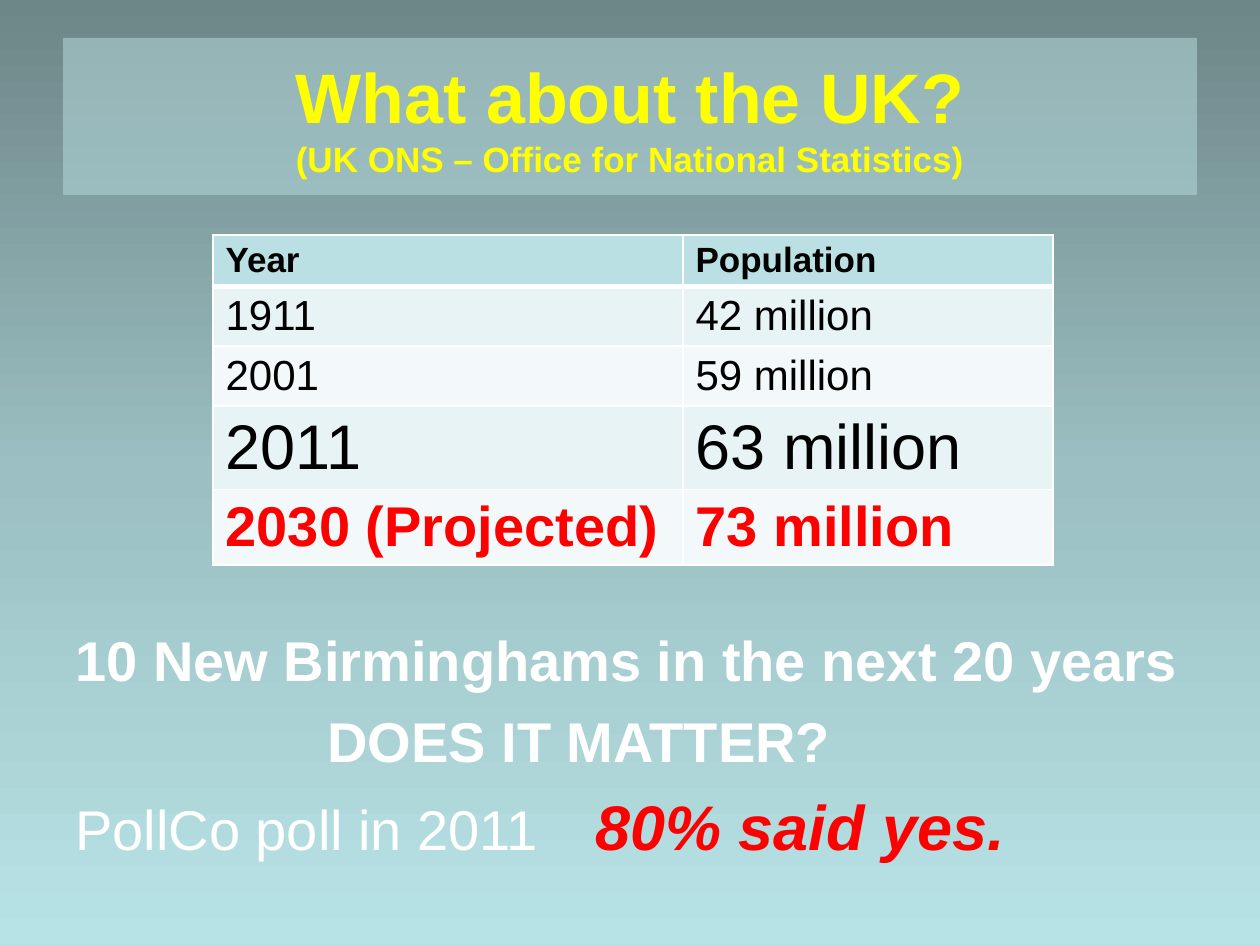
"""Build the slide on UK population growth."""
from copy import deepcopy

from pptx import Presentation
from pptx.dml.color import RGBColor
from pptx.enum.text import MSO_ANCHOR, MSO_AUTO_SIZE, PP_ALIGN
from pptx.oxml.ns import qn
from pptx.util import Emu, Pt
from lxml import etree

CENTER, LEFT = PP_ALIGN.CENTER, PP_ALIGN.LEFT
MIDDLE = MSO_ANCHOR.MIDDLE
NO_AUTOFIT = MSO_AUTO_SIZE.NONE
FONT = "Arial"
YELLOW, WHITE, BLACK, RED, AQUA = "FFFF00", "FFFFFF", "000000", "FF0000", "BBE0E3"
BACKDROP = [(0, "6D8688"), (0.5, "9BBFC2"), (1, "B8E3E6")]

HEADING = [("What about the UK?\v", {"size": 40}),
           ("(UK ONS – Office for National Statistics)", {"size": 20})]
COLUMN_WIDTHS = [470, 370]
POPULATION = [
    (("Year", "Population"), 51, AQUA, {"size": 20, "bold": True}),
    (("1911", "42 million"), 59, "E7F3F4", {"size": 24}),
    (("2001", "59 million"), 60, "F3F9FA", {"size": 24}),
    (("2011", "63 million"), 83, "E7F3F4", {"size": 36}),
    (("2030 (Projected)", "73 million"), 75, "F3F9FA",
     {"size": 32, "bold": True, "color": RED}),
]
CLOSING = [
    (0, [("10 New Birminghams in the next 20 years", {"bold": True})]),
    (252, [("DOES IT MATTER?", {"bold": True})]),
    (0, [("PollCo poll in 2011\t", {}),
         ("80% said yes.", {"size": 36, "bold": True, "italic": True, "color": RED})]),
]
ANSWER_TAB = 520


def px(length):
    return Emu(round(length * 914400 / 126))


def rgb(color):
    return RGBColor.from_string(color)


def write(paragraph, text, size=32, color=BLACK, bold=False, italic=False):
    start = len(paragraph.runs)
    paragraph.add_run().text = text.rstrip("\v")
    if text.endswith("\v"):
        paragraph.add_line_break()
    font = paragraph.runs[start].font
    font.name, font.size, font.bold, font.italic = FONT, Pt(size), bold, italic
    font.color.rgb = rgb(color)


def paint_background(slide):
    fill = slide.background.fill
    fill.gradient()
    fill.gradient_angle = 270
    last = fill.gradient_stops[1].color
    stop_list = slide.background._cSld.find(".//" + qn("a:gsLst"))
    stop_list.append(deepcopy(stop_list[-1]))
    for stop, (position, color) in zip(fill.gradient_stops, BACKDROP):
        stop.position = position
        stop.color.rgb = rgb(color)


def add_heading(slide):
    heading = slide.shapes.title
    heading.left, heading.top, heading.width, heading.height = map(px, (63, 38, 1134, 157))
    heading.fill.solid()
    heading.fill.fore_color.rgb = rgb(AQUA)
    tint = heading._element.spPr.find(".//" + qn("a:srgbClr"))
    etree.SubElement(tint, qn("a:alpha"), val="49000")
    frame = heading.text_frame
    frame.auto_size, frame.vertical_anchor = NO_AUTOFIT, MIDDLE
    frame.paragraphs[0].alignment = CENTER
    for text, style in HEADING:
        write(frame.paragraphs[0], text, color=YELLOW, bold=True, **style)


def add_border(cell, side, points):
    line = etree.SubElement(cell._tc.get_or_add_tcPr(), qn("a:ln" + side), w=str(Pt(points)))
    solid = etree.SubElement(line, qn("a:solidFill"))
    etree.SubElement(solid, qn("a:srgbClr"), val=WHITE)


def add_population(slide):
    heights = [height for _, height, _, _ in POPULATION]
    table = slide.shapes.add_table(
        len(POPULATION), len(COLUMN_WIDTHS), px(213), px(235),
        px(sum(COLUMN_WIDTHS)), px(sum(heights))).table
    for column, width in zip(table.columns, COLUMN_WIDTHS):
        column.width = px(width)
    for r, (texts, height, fill, style) in enumerate(POPULATION):
        table.rows[r].height = px(height)
        for c, text in enumerate(texts):
            cell = table.cell(r, c)
            for side in "LRTB":
                under_header = (r, side) in ((0, "B"), (1, "T"))
                add_border(cell, side, 3 if under_header else 1)
            cell.fill.solid()
            cell.fill.fore_color.rgb = rgb(fill)
            write(cell.text_frame.paragraphs[0], text, **style)


def add_closing(slide):
    frame = slide.shapes.add_textbox(px(63), px(619), px(1134), px(250)).text_frame
    frame.word_wrap = True
    for i, (indent, runs) in enumerate(CLOSING):
        paragraph = frame.add_paragraph() if i else frame.paragraphs[0]
        paragraph.alignment = LEFT
        properties = paragraph._p.get_or_add_pPr()
        properties.set("marL", str(px(indent)))
        if len(runs) > 1:
            tabs = etree.SubElement(properties, qn("a:tabLst"))
            etree.SubElement(tabs, qn("a:tab"), pos=str(px(ANSWER_TAB)), algn="l")
        if i:
            paragraph.space_before = Pt(8)
        for text, style in runs:
            write(paragraph, text, **{"color": WHITE, **style})


def main():
    deck = Presentation()
    deck.slide_width, deck.slide_height = px(1260), px(945)
    slide = deck.slides.add_slide(deck.slide_layouts[5])
    paint_background(slide)
    add_heading(slide)
    add_population(slide)
    add_closing(slide)
    deck.save("out.pptx")


if __name__ == "__main__":
    main()
